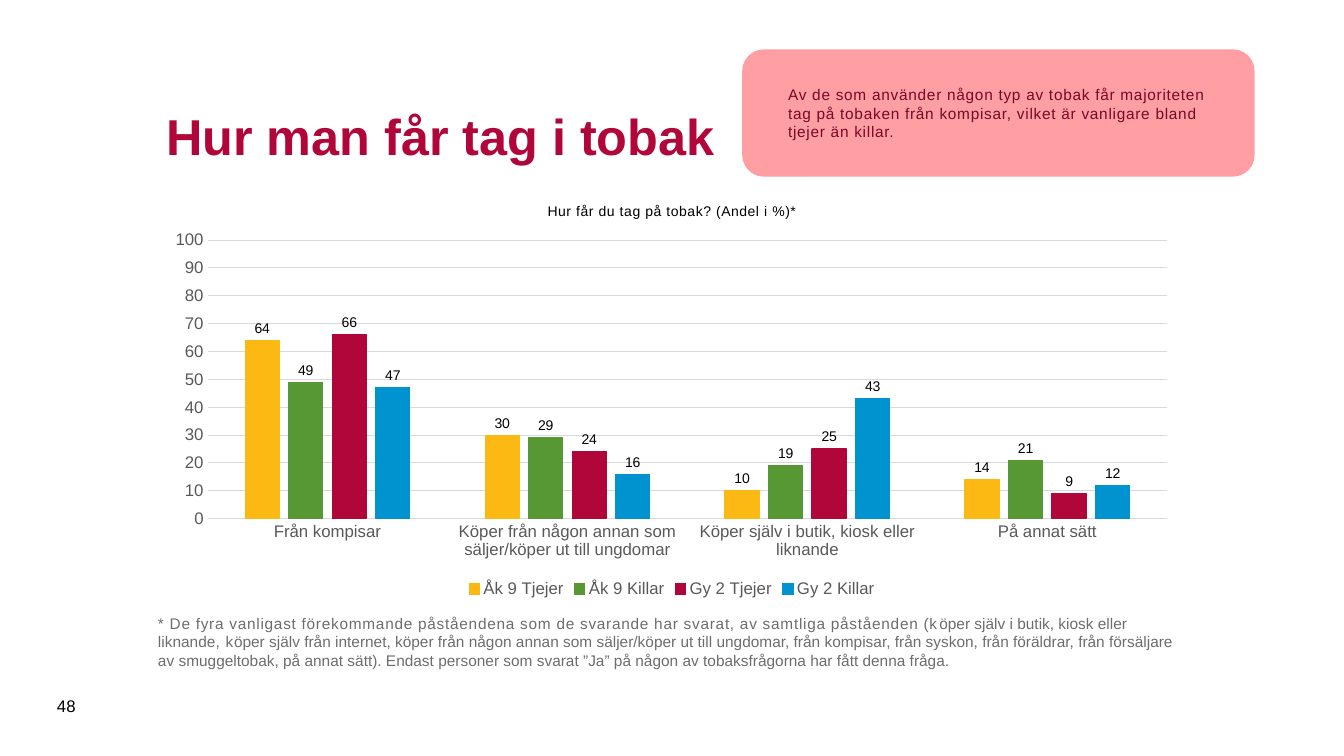
from lxml import etree
from pptx import Presentation
from pptx.chart.data import CategoryChartData
from pptx.dml.color import RGBColor
from pptx.enum.chart import XL_CHART_TYPE as ChartType, XL_LABEL_POSITION as LabelPosition
from pptx.enum.chart import XL_LEGEND_POSITION as LegendPosition, XL_TICK_MARK as TickMark
from pptx.enum.shapes import MSO_SHAPE as ShapeType
from pptx.enum.text import MSO_ANCHOR as Anchor, MSO_AUTO_SIZE as AutoSize, PP_ALIGN as Align
from pptx.oxml import parse_xml
from pptx.oxml.ns import nsdecls, qn
from pptx.util import Emu, Pt

PX = 914400 / 100.8
FONT = "Arial"
COLORS = {
    "crimson": "B1063A", "wine": "790726", "pink": "FF9DA2", "yellow": "FDB913",
    "green": "579835", "blue": "0093D0", "black": "000000", "note": "6D6D6D",
    "axis": "595959", "grid": "D9D9D9",
}
CATEGORIES = [
    "Från kompisar",
    "Köper från någon annan som säljer/köper ut till ungdomar",
    "Köper själv i butik, kiosk eller liknande",
    "På annat sätt",
]
SERIES = [
    ("Åk 9 Tjejer", (64, 30, 10, 14), "yellow"),
    ("Åk 9 Killar", (49, 29, 19, 21), "green"),
    ("Gy 2 Tjejer", (66, 24, 25, 9), "crimson"),
    ("Gy 2 Killar", (47, 16, 43, 12), "blue"),
]
NUMBER_FORMAT = "#,##0;#,##0"


def px(length):
    return Emu(round(length * PX))


def color(name):
    return RGBColor.from_string(COLORS[name])


def format_font(font, size, color_name, bold=False):
    font.name = FONT
    font.size = Pt(size)
    font.bold = bold
    font.color.rgb = color(color_name)


def format_line(line, color_name, width=0.75):
    line.color.rgb = color(color_name)
    line.width = Pt(width)


def write(frame, text, size=11, color_name="black", bold=False, spacing=0,
          anchor=Anchor.TOP, margins=(10, 5)):
    """text is a string, or a list of (string, letter spacing) pairs."""
    frame.word_wrap = True
    frame.auto_size = AutoSize.NONE
    frame.vertical_anchor = anchor
    frame.margin_left = frame.margin_right = px(margins[0])
    frame.margin_top = frame.margin_bottom = px(margins[1])
    paragraph = frame.paragraphs[0]
    paragraph.alignment = Align.LEFT
    for part, gap in [(text, spacing)] if isinstance(text, str) else text:
        run = paragraph.add_run()
        run.text = part
        format_font(run.font, size, color_name, bold)
        if gap:
            run.font._element.set("spc", str(gap))


def add_heading(slide, left, top, width, height):
    title = slide.shapes.title
    title.left, title.top, title.width, title.height = map(px, (left, top, width, height))
    write(title.text_frame, "Hur man får tag i tobak", size=36, color_name="crimson",
          bold=True, anchor=Anchor.MIDDLE)


def add_callout(slide, left, top, width, height):
    callout = slide.shapes.add_shape(ShapeType.ROUNDED_RECTANGLE,
                                     *map(px, (left, top, width, height)))
    callout.shadow.inherit = False
    callout.fill.solid()
    callout.fill.fore_color.rgb = color("pink")
    fill_color = callout._element.spPr.find(qn("a:solidFill"))[0]
    etree.SubElement(fill_color, qn("a:alpha")).set("val", "98000")
    format_line(callout.line, "pink", 1)
    write(callout.text_frame,
          "Av de som använder någon typ av tobak får majoriteten tag på tobaken från "
          "kompisar, vilket är vanligare bland tjejer än killar.",
          color_name="wine", spacing=50, anchor=Anchor.MIDDLE, margins=(39, 20))


def add_text(slide, left, top, width, height, text, **text_format):
    box = slide.shapes.add_textbox(*map(px, (left, top, width, height)))
    write(box.text_frame, text, **text_format)


def format_axes(chart):
    category_axis, value_axis = chart.category_axis, chart.value_axis
    for axis in (category_axis, value_axis):
        axis.major_tick_mark = axis.minor_tick_mark = TickMark.NONE
        format_font(axis.tick_labels.font, 12, "axis")
    format_line(category_axis.format.line, "grid")
    value_axis.format.line.fill.background()
    value_axis.minimum_scale, value_axis.maximum_scale = 0, 100
    value_axis.major_unit = 10
    value_axis.tick_labels.number_format = NUMBER_FORMAT
    value_axis.tick_labels.number_format_is_linked = False
    value_axis.has_major_gridlines = True
    format_line(value_axis.major_gridlines.format.line, "grid")


def format_bars(plot):
    plot.gap_width, plot.overlap = 219, -27
    plot.vary_by_categories = False
    for bars, (_, _, color_name) in zip(plot.series, SERIES):
        bars.format.fill.solid()
        bars.format.fill.fore_color.rgb = color(color_name)
        format_line(bars.format.line, color_name)
        labels = bars.data_labels
        labels.show_value = True
        labels.position = LabelPosition.OUTSIDE_END
        labels.number_format = NUMBER_FORMAT
        labels.number_format_is_linked = False
        format_font(labels.font, 10, "black")


def place_plot_area(chart, **fractions):
    """Fix the inner plot area as fractions of the chart."""
    plot_area = chart._chartSpace.chart.plotArea
    for layout in plot_area.findall(qn("c:layout")):
        plot_area.remove(layout)
    values = "".join(f'<c:{key} val="{value}"/>' for key, value in fractions.items())
    plot_area.insert(0, parse_xml(
        f'<c:layout {nsdecls("c")}><c:manualLayout><c:layoutTarget val="inner"/>'
        f'<c:xMode val="edge"/><c:yMode val="edge"/>{values}</c:manualLayout></c:layout>'))


def add_tobacco_chart(slide, left, top, width, height):
    data = CategoryChartData(number_format="0")
    data.categories = CATEGORIES
    for name, values, _ in SERIES:
        data.add_series(name, values)
    chart = slide.shapes.add_chart(ChartType.COLUMN_CLUSTERED,
                                   *map(px, (left, top, width, height)), data).chart
    format_font(chart.font, 10, "black")
    chart.has_title = True
    write(chart.chart_title.text_frame, "Hur får du tag på tobak? (Andel i %)*",
          size=10, spacing=50)
    chart.chart_title.include_in_layout = False
    format_axes(chart)
    format_bars(chart.plots[0])
    place_plot_area(chart, x=0.05, y=0.13, w=0.93, h=0.67)
    chart.has_legend = True
    chart.legend.position = LegendPosition.BOTTOM
    chart.legend.include_in_layout = False
    format_font(chart.legend.font, 12, "axis")


def build_tobacco_slide(presentation):
    slide = presentation.slides.add_slide(presentation.slide_layouts[5])
    add_heading(slide, 156, 64, 1032, 143)
    add_text(slide, 47, 686, 57, 40, "48", size=12, anchor=Anchor.MIDDLE)
    add_callout(slide, 743, 50, 511, 126)
    # Footnote
    add_text(slide, 158, 614, 1032, 95, [
        ("* De fyra vanligast förekommande påståendena som de svarande har svarat, "
         "av samtliga påståenden (k", 50),
        ("öper själv i butik, kiosk eller liknande", 0),
        (", k", 50),
        ("öper själv från internet, köper från någon annan som säljer/köper ut till "
         "ungdomar, från kompisar, från syskon, från föräldrar, från försäljare av "
         "smuggeltobak, på annat sätt). Endast personer som svarat ”Ja” på någon av "
         "tobaksfrågorna har fått denna fråga.", 0),
    ], color_name="note", margins=(0, 0))
    add_tobacco_chart(slide, 156, 186, 1032, 416)


def main():
    presentation = Presentation()
    presentation.slide_width, presentation.slide_height = px(1344), px(756)
    build_tobacco_slide(presentation)
    presentation.save("out.pptx")


if __name__ == "__main__":
    main()
